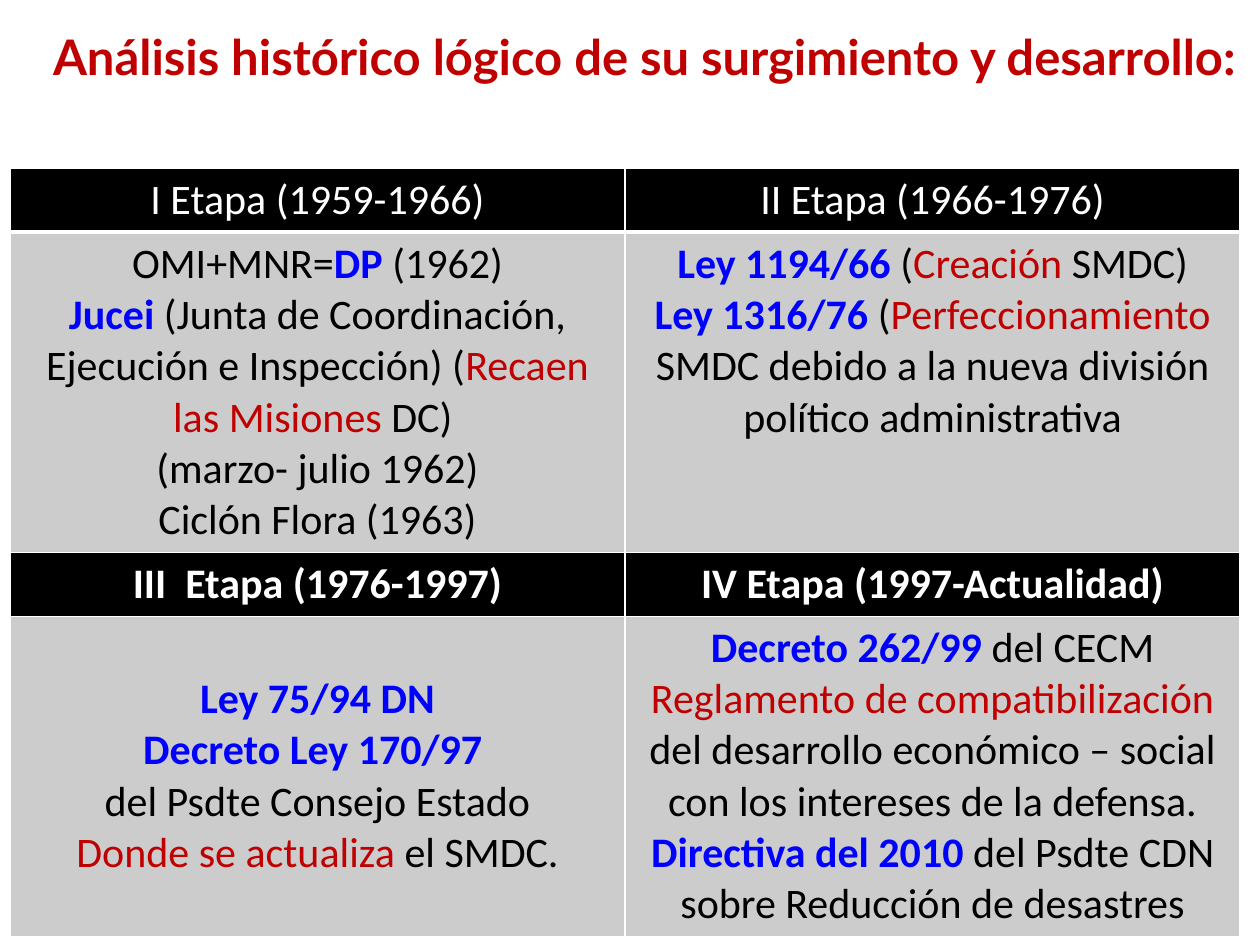
import pptx
import pptx.util
import pptx.dml.color
import pptx.enum.text
from lxml import etree
from pptx.oxml.ns import qn

Cm, Pt = pptx.util.Cm, pptx.util.Pt
RGB = pptx.dml.color.RGBColor
MID = pptx.enum.text.PP_ALIGN.CENTER

BLACK = RGB(0x00, 0x00, 0x00)
WHITE = RGB(0xFF, 0xFF, 0xFF)
GREY = RGB(0xCC, 0xCC, 0xCC)
BLUE = RGB(0x00, 0x00, 0xFF)
RED = RGB(0xC0, 0x00, 0x00)

# Content: rows of cells, cells of paragraphs, paragraphs of (text, style)
TITLE = "Análisis histórico lógico de su surgimiento y desarrollo:"
ROWS = [
    [[[("I Etapa (1959-1966)", "head")]],
     [[("II Etapa (1966-1976)", "head")]]],
    [[[("OMI+MNR=", "text"), ("DP", "law"), (" (1962)", "text")],
      [("Jucei", "law"),
       (" (Junta de Coordinación, Ejecución e Inspección) (", "text"),
       ("Recaen las Misiones ", "key"), ("DC) ", "text")],
      [("(marzo- julio 1962)", "text")],
      [("Ciclón Flora (1963)", "text")]],
     [[("Ley 1194/66 ", "law"), ("(", "text"), ("Creación ", "key"),
       ("SMDC)", "text")],
      [("Ley 1316/76 ", "law"), ("(", "text"), ("Perfeccionamiento", "key"),
       (" SMDC debido a la nueva división político administrativa", "text")]]],
    [[[("III  Etapa (1976-1997)", "bold")]],
     [[("IV Etapa (1997-Actualidad)", "bold")]]],
    [[[("Ley 75/94 DN", "law")],
      [("Decreto Ley 170/97 ", "law")],
      [("del Psdte Consejo Estado", "text")],
      [("Donde se actualiza ", "key"), ("el SMDC.", "text")]],
     [[("Decreto 262/99 ", "law"), ("del CECM", "text")],
      [("Reglamento de compatibilización ", "key"),
       ("del desarrollo económico – social con los intereses de la defensa.",
        "text")],
      [("Directiva del 2010 ", "law"),
       ("del Psdte CDN sobre Reducción de desastres", "text")]]],
]

# Format values
STYLES = {
    "title": (RED, {"name": "Lato", "size": Pt(28), "bold": True}),
    "head": (WHITE, {"name": "Calibri", "size": Pt(24), "bold": False}),
    "bold": (WHITE, {"name": "Calibri", "size": Pt(24), "bold": True}),
    "text": (BLACK, {"name": "Calibri", "size": Pt(24), "bold": False}),
    "law": (BLUE, {"name": "Calibri", "size": Pt(24), "bold": True}),
    "key": (RED, {"name": "Calibri", "size": Pt(24), "bold": False}),
}
FILLS = [BLACK, GREY]
HEIGHTS = [Cm(1.29), Cm(6.45)]
WIDTH = Cm(12.4)


def write(frame, paras):
    for num, runs in enumerate(paras):
        para = frame.paragraphs[0] if num == 0 else frame.add_paragraph()
        para.alignment = MID
        for text, style in runs:
            run = para.add_run()
            run.text = text
            color, values = STYLES[style]
            for name, value in values.items():
                setattr(run.font, name, value)
            run.font.color.rgb = color


def border(cell, base):
    props = cell._tc.get_or_add_tcPr()
    for num, (side, width) in enumerate(zip("LRTB", (1, 1, 1, base))):
        line = etree.Element(qn("a:ln" + side), w=str(Pt(width)))
        fill = etree.SubElement(line, qn("a:solidFill"))
        etree.SubElement(fill, qn("a:srgbClr"), val=str(WHITE))
        props.insert(num, line)


deck = pptx.Presentation()
deck.slide_width, deck.slide_height = Cm(25.4), Cm(19.05)
slide = deck.slides.add_slide(deck.slide_layouts[6])

# Table of stages: heading and body rows alternate
frame = slide.shapes.add_table(len(ROWS), 2, Cm(0.2), Cm(3.39),
                               2 * WIDTH, 2 * sum(HEIGHTS))
table = frame.table
for col in table.columns:
    col.width = WIDTH
for r, row in enumerate(ROWS):
    table.rows[r].height = HEIGHTS[r % 2]
    for c, paras in enumerate(row):
        cell = table.cell(r, c)
        cell.fill.solid()
        cell.fill.fore_color.rgb = FILLS[r % 2]
        border(cell, 3 if r == 0 else 1)
        write(cell.text_frame, paras)

# The third stage starts one line lower
table.cell(3, 0).margin_top = Cm(1.16)

# Title
box = slide.shapes.add_textbox(Cm(0.58), Cm(0.4), Cm(24.82), Cm(2.64))
box.text_frame.word_wrap = True
write(box.text_frame, [[(TITLE, "title")]])

deck.save("out.pptx")
